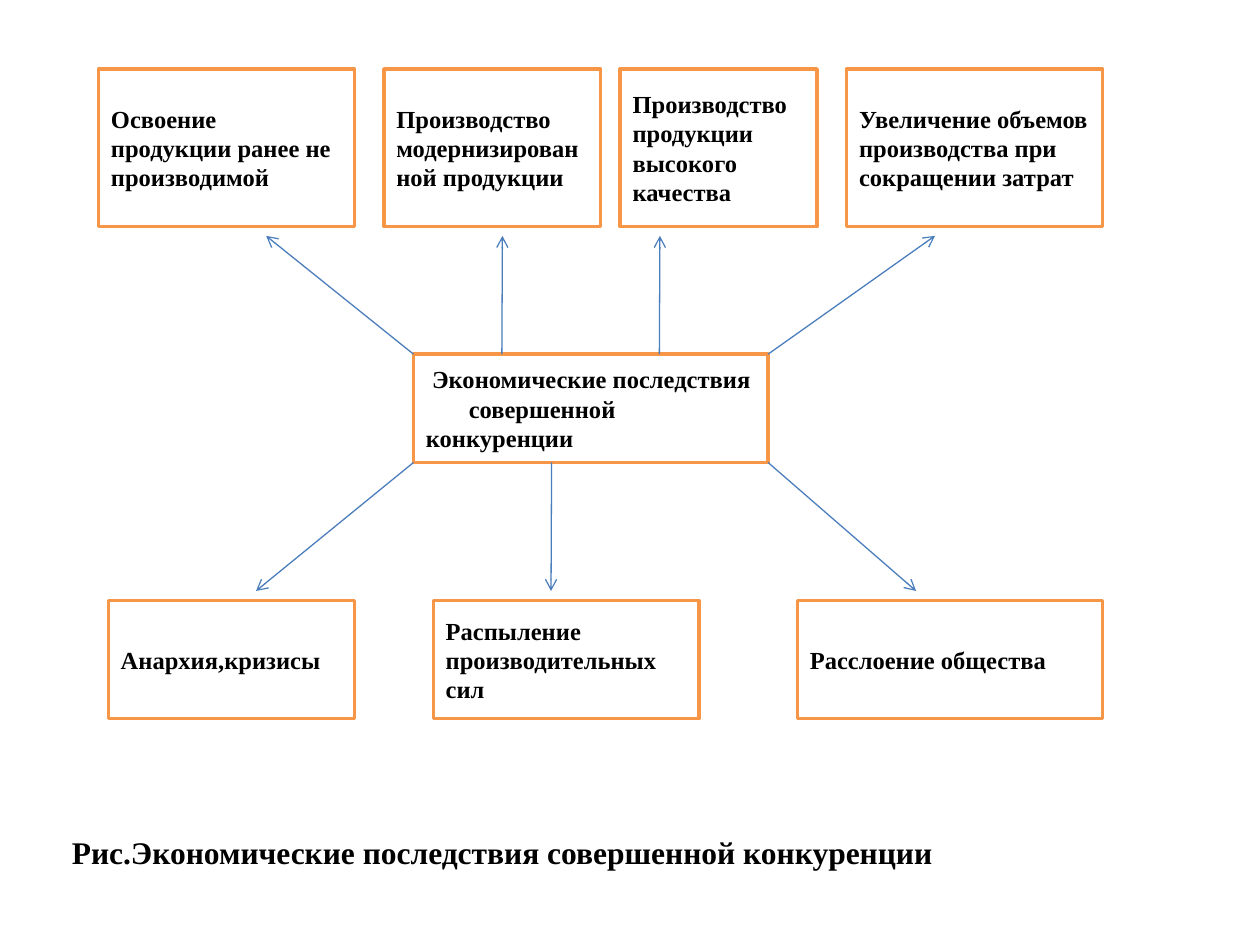
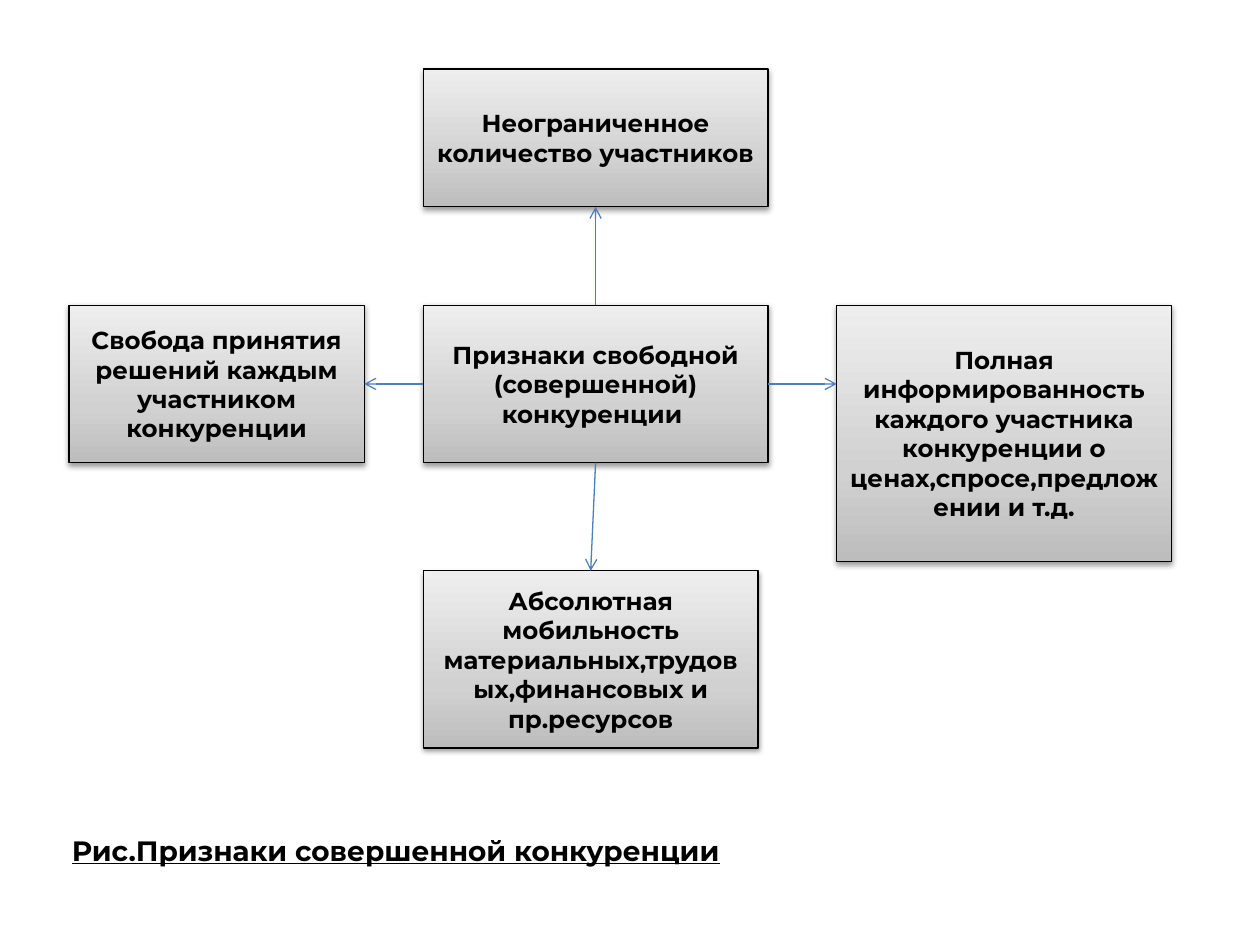
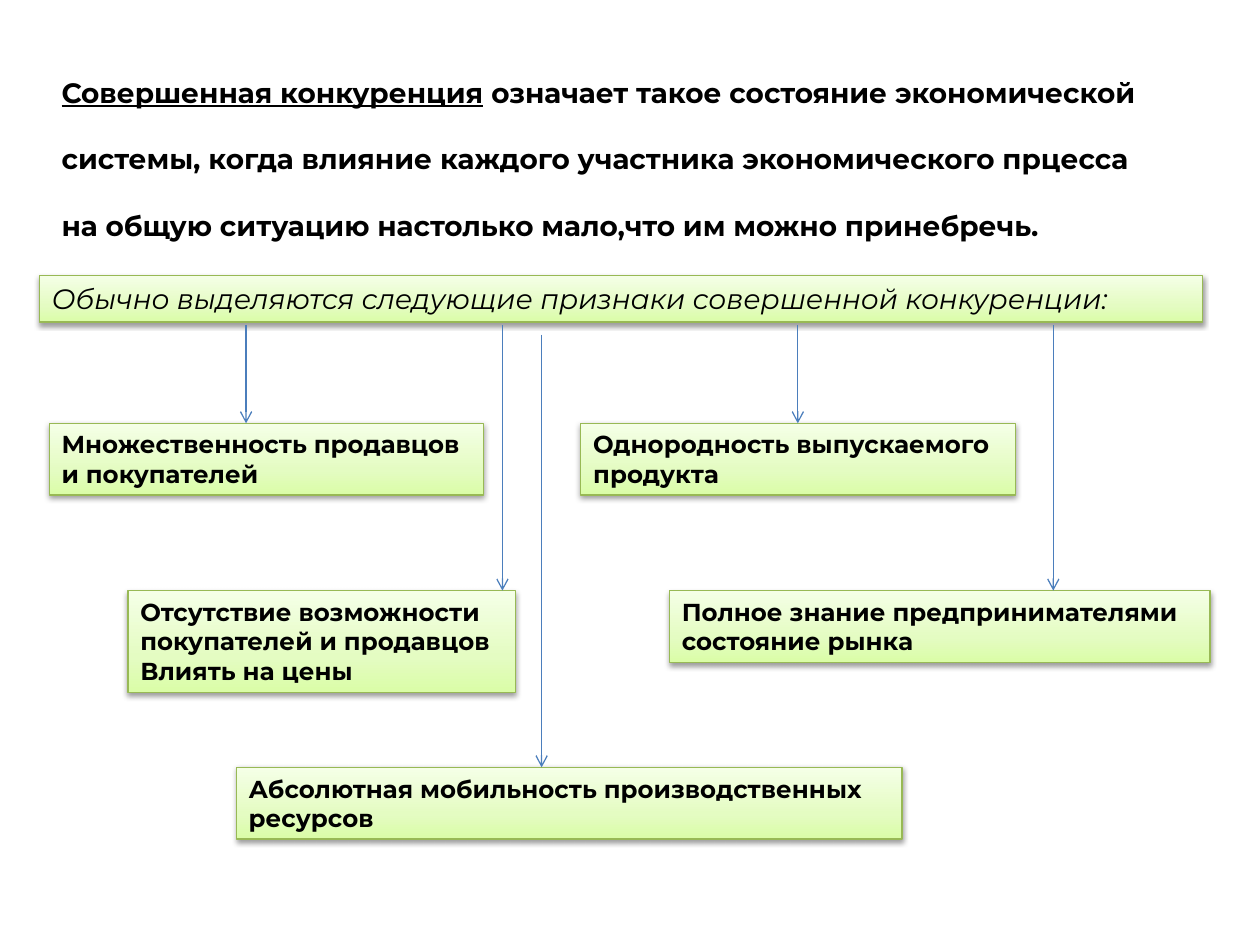
from lxml import etree
from pptx import Presentation
from pptx.dml.color import RGBColor
from pptx.enum.shapes import MSO_CONNECTOR, MSO_SHAPE
from pptx.enum.text import MSO_ANCHOR, PP_ALIGN
from pptx.oxml.ns import qn
from pptx.util import Pt

STRAIGHT = MSO_CONNECTOR.STRAIGHT
PROCESS, RECT = MSO_SHAPE.FLOWCHART_PROCESS, MSO_SHAPE.RECTANGLE
TOP, MIDDLE = MSO_ANCHOR.TOP, MSO_ANCHOR.MIDDLE
LEFT, CENTER = PP_ALIGN.LEFT, PP_ALIGN.CENTER

SERIF, SANS = "Times New Roman", "Montserrat"
BLACK, WHITE, ORANGE, BLUE, GREEN = "000000", "FFFFFF", "F79646", "4B7EBC", "98B955"
GRAYS = ("BDBDBD", "D1D1D1", "EEEEEE")
GREENS = ("DAFDA7", "E4FCC2", "F5FFE7")
STOPS = (0, 35, 100)
CAPTION_LEFT, CAPTION_TOP = 34, 472.5


def rgb(value):
    """Turn a hex string into a colour."""
    return RGBColor.from_string(value)


def write(sp, lines, font, size, bold=True, italic=False, underline=False,
          align=LEFT, anchor=TOP):
    """Put one paragraph per line into a shape and format its runs."""
    tf = sp.text_frame
    tf.word_wrap = True
    tf.vertical_anchor = anchor
    for i, line in enumerate(lines):
        p = tf.add_paragraph() if i else tf.paragraphs[0]
        p.text = line
        p.alignment = align
        for r in p.runs:
            r.font.name, r.font.size = font, Pt(size)
            r.font.bold, r.font.italic, r.font.underline = bold, italic, underline
            r.font.color.rgb = rgb(BLACK)
    return tf


def add_text(slide, box, lines, font, size, **style):
    """Add a plain text box."""
    sp = slide.shapes.add_textbox(*map(Pt, box))
    return write(sp, lines, font, size, **style)


def add_box(slide, box, kind, line, width):
    """Add an outlined shape without a shadow."""
    sp = slide.shapes.add_shape(kind, *map(Pt, box))
    sp.shadow.inherit = False
    sp.line.color.rgb = rgb(line)
    sp.line.width = Pt(width)
    return sp


def add_raised_box(slide, box, kind, line, colors):
    """Add a box with an upward gradient and a soft shadow below."""
    sp = add_box(slide, box, kind, line, 0.75)
    sp.fill.gradient()
    sp.fill.gradient_angle = 90
    stops = sp._element.spPr.find(".//" + qn("a:gsLst"))
    for stop in list(stops):
        stops.remove(stop)
    for position, color in zip(STOPS, colors):
        stop = etree.SubElement(stops, qn("a:gs"), pos=str(position * 1000))
        etree.SubElement(stop, qn("a:srgbClr"), val=color)
    effects = sp._element.spPr.find(qn("a:effectLst"))
    shadow = etree.SubElement(effects, qn("a:outerShdw"), blurRad="40000",
                              dist="20000", dir="5400000", rotWithShape="0")
    color = etree.SubElement(shadow, qn("a:srgbClr"), val=BLACK)
    etree.SubElement(color, qn("a:alpha"), val="38000")
    return sp


def add_arrow(slide, x1, y1, x2, y2):
    """Draw a thin blue arrow."""
    cn = slide.shapes.add_connector(STRAIGHT, Pt(x1), Pt(y1), Pt(x2), Pt(y2))
    cn.line.color.rgb = rgb(BLUE)
    cn.line.width = Pt(0.75)
    etree.SubElement(cn.line._get_or_add_ln(), qn("a:tailEnd"), type="arrow")
    etree.SubElement(cn._element.spPr, qn("a:effectLst"))


def consequences(slide, box):
    """Draw a hub with arrows to a row of gains and a row of losses."""
    x, y, w, h = box
    gains = [
        (0, 146.3, "Освоение продукции ранее не производимой"),
        (163.1, 123.8, "Производство модернизирован ной продукции"),
        (298.1, 112.5, "Производство продукции высокого качества"),
        (427.5, 146.3, "Увеличение объемов производства при сокращении затрат"),
    ]
    losses = [
        (5.6, 140.6, "Анархия,кризисы"),
        (191.3, 151.9, "Распыление производительных сил"),
        (399.4, 174.4, "Расслоение общества"),
    ]
    hub_lines = [("Экономические последствия", 3.5), ("совершенной", 24.5),
                 ("конкуренции", 0)]
    hub_left, hub_top, hub_w, hub_h = x + 180, y + 163, w - 371.2, 61.9

    def outlined(frame, lines):
        sp = add_box(slide, frame, PROCESS, ORANGE, 2)
        sp.fill.solid()
        sp.fill.fore_color.rgb = rgb(WHITE)
        return write(sp, lines, SERIF, 14, anchor=MIDDLE)

    for row, top, height in ((gains, y, 90), (losses, y + h - 67.5, 67.5)):
        for dx, width, text in row:
            outlined((x + dx, top, width, height), [text])
    tf = outlined((hub_left, hub_top, hub_w, hub_h), [t for t, _ in hub_lines])
    for p, (_, indent) in zip(tf.paragraphs, hub_lines):
        p._p.get_or_add_pPr().set("marL", str(Pt(indent)))

    up = [(0, -84.2), (50.5, 50.8), (140.5, 140.8), (hub_w, 298)]
    down = [(0, -90), (78.9, 78.6), (hub_w, 287.2)]
    for ends, start, end in ((up, hub_top, y + 95.4),
                             (down, hub_top + hub_h, y + h - 73)):
        for dx1, dx2 in ends:
            add_arrow(slide, hub_left + dx1, start, hub_left + dx2, end)


def features(slide, box):
    """Draw a hub with one feature on each of its four sides."""
    x, y, w, h = box
    mid_x, mid_y, mid_w, mid_h = x + 202.5, y + 135, 196.9, 90
    side_w, top_h, bottom_h = 191.3, 78.8, 101.3
    cx, cy = mid_x + mid_w / 2, mid_y + mid_h / 2
    frames = [
        ((mid_x, y, mid_w, top_h), "Неограниченное количество участников"),
        ((x, mid_y, 168.8, mid_h),
         "Свобода принятия решений каждым участником конкуренции"),
        ((mid_x, mid_y, mid_w, mid_h),
         "Признаки свободной (совершенной) конкуренции "),
        ((x + w - side_w, mid_y, side_w, 146.3),
         "Полная информированность каждого участника конкуренции о "
         "ценах,спросе,предложении и т.д."),
        ((mid_x, y + h - bottom_h, side_w, bottom_h),
         "Абсолютная мобильность материальных,трудовых,финансовых и пр.ресурсов"),
    ]
    for frame, text in frames:
        sp = add_raised_box(slide, frame, PROCESS, BLACK, GRAYS)
        write(sp, [text], SANS, 14, align=CENTER, anchor=MIDDLE)
    add_arrow(slide, cx, mid_y, cx, y + top_h)
    add_arrow(slide, mid_x, cy, x + 168.8, cy)
    add_arrow(slide, mid_x + mid_w, cy, x + w - side_w, cy)
    add_arrow(slide, cx, mid_y + mid_h, mid_x + side_w / 2, y + h - bottom_h)


def definition(slide, box):
    """Write the definition with its term underlined."""
    term = "Совершенная конкуренция"
    tf = add_text(slide, box, [
        term,
        "системы, когда влияние каждого участника экономического прцесса",
        "на общую ситуацию настолько мало,что им можно принебречь.",
    ], SANS, 16)
    first = tf.paragraphs[0]
    first.runs[0].font.underline = True
    r = first.add_run()
    r.text = " означает такое состояние экономической"
    r.font.name, r.font.size, r.font.bold = SANS, Pt(16), True
    r.font.color.rgb = rgb(BLACK)
    for p in tf.paragraphs[1:]:
        p.space_before = Pt(19)


def sign_tree(slide, box):
    """Draw a header bar with arrows down to the signs below it."""
    x, y, w, h = box
    bar_h, gap = 26.6, 1.6
    signs = [
        (5.6, 84.4, 248.4, 41, 118.1, gap,
         ["Множественность продавцов", "и покупателей"]),
        (309.4, 84.4, 248.4, 41, 433.4, gap,
         ["Однородность выпускаемого", "продукта"]),
        (50.6, 180, 221.4, 58.2, 264.6, gap,
         ["Отсутствие возможности", "покупателей и продавцов", "Влиять на цены"]),
        (360, 180, 308.9, 41, 579.4, gap,
         ["Полное знание предпринимателями", "состояние рынка"]),
        (112.5, h - 41, 380.4, 41, 287, 7.2,
         ["Абсолютная мобильность производственных", "ресурсов"]),
    ]
    bar = add_raised_box(slide, (x, y, w, bar_h), RECT, GREEN, GREENS)
    write(bar, ["Обычно выделяются следующие признаки совершенной конкуренции:"],
          SANS, 16, bold=False, italic=True)
    for dx, dy, width, height, _, _, lines in signs:
        sp = add_raised_box(slide, (x + dx, y + dy, width, height),
                            RECT, GREEN, GREENS)
        write(sp, lines, SANS, 14)
    for _, dy, _, _, arrow_x, drop, _ in signs:
        add_arrow(slide, x + arrow_x, y + bar_h + drop, x + arrow_x, y + dy)


def main():
    """Build the three slides."""
    prs = Presentation()
    prs.slide_width, prs.slide_height = Pt(720), Pt(540)
    blank = prs.slide_layouts[6]

    slide = prs.slides.add_slide(blank)
    consequences(slide, (56.3, 39.4, 573.8, 371.3))
    add_text(slide, (CAPTION_LEFT, CAPTION_TOP, 596, 29),
             ["Рис.Экономические последствия совершенной конкуренции"], SERIF, 18)

    slide = prs.slides.add_slide(blank)
    features(slide, (39.4, 39.4, 630, 388.1))
    add_text(slide, (CAPTION_LEFT, CAPTION_TOP, 399, 26.6),
             ["Рис.Признаки совершенной конкуренции"], SANS, 16, underline=True)

    slide = prs.slides.add_slide(blank)
    definition(slide, (28.1, 39.4, 743.8, 104.4))
    sign_tree(slide, (22.5, 157.5, 664.6, 322))

    prs.save("out.pptx")


if __name__ == "__main__":
    main()
